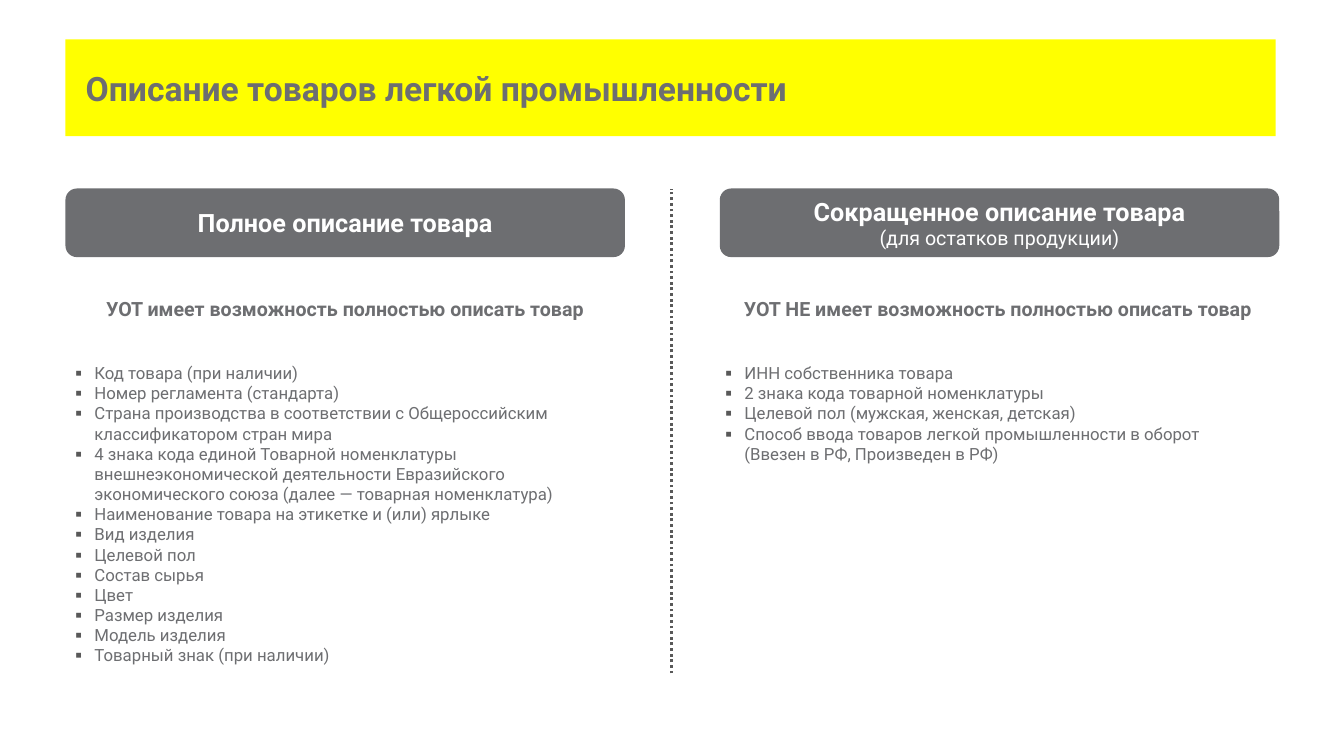
"""Builds a slide comparing full and short descriptions of light-industry goods."""
from dataclasses import dataclass

from lxml import etree
from pptx import Presentation
from pptx import util as u
from pptx.dml.color import RGBColor
from pptx.enum import dml, shapes, text
from pptx.oxml import ns

Cm, Pt = u.Cm, u.Pt


@dataclass(frozen=True)
class Theme:
    font: str = "Roboto"
    grey: RGBColor = RGBColor(0x6D, 0x6E, 0x71)
    dark: RGBColor = RGBColor(0x59, 0x59, 0x59)
    yellow: RGBColor = RGBColor(0xFF, 0xFF, 0x00)
    white: RGBColor = RGBColor(0xFF, 0xFF, 0xFF)
    title: int = 24
    header: int = 18
    lead: int = 14
    body: int = 12


T = Theme()
MARGIN, COLUMN_W = 1.65, 14.1
RIGHT = 18.14
COLUMN_TOP, COLUMN_BOTTOM = 4.75, 16.97

FULL = [
    "Код товара (при наличии)",
    "Номер регламента (стандарта)",
    "Страна производства в соответствии с Общероссийским классификатором стран мира",
    "4 знака кода единой Товарной номенклатуры внешнеэкономической деятельности "
    "Евразийского экономического союза (далее — товарная номенклатура)",
    "Наименование товара на этикетке и (или) ярлыке",
    "Вид изделия",
    "Целевой пол",
    "Состав сырья",
    "Цвет",
    "Размер изделия",
    "Модель изделия",
    "Товарный знак (при наличии)",
]
SHORT = [
    "ИНН собственника товара",
    "2 знака кода товарной номенклатуры",
    "Целевой пол (мужская, женская, детская)",
    "Способ ввода товаров легкой промышленности в оборот (Ввезен в РФ, Произведен в РФ)",
]


def sub(parent, tag, **attrs):
    return etree.SubElement(parent, ns.qn(tag), attrs)


def style(p, size, color, bold=False, align=text.PP_ALIGN.LEFT):
    p.alignment = align
    f = p.font
    f.name, f.size, f.bold = T.font, Pt(size), bold
    f.color.rgb = color


def frame(sp, inset=None):
    tf = sp.text_frame
    tf.word_wrap = True
    tf.auto_size = text.MSO_AUTO_SIZE.NONE
    tf.vertical_anchor = text.MSO_ANCHOR.MIDDLE
    if inset:
        tf.margin_left = tf.margin_right = tf.margin_top = tf.margin_bottom = Cm(inset)
    return tf


def add_title(s, words):
    sp = s.shapes.title
    sp.left, sp.top, sp.width, sp.height = Cm(MARGIN), Cm(0.99), Cm(30.5), Cm(2.44)
    geom = sub(sp.element.spPr, "a:prstGeom", prst="roundRect")
    sub(geom, "a:avLst")
    sp.fill.solid()
    sp.fill.fore_color.rgb = T.yellow
    tf = frame(sp, 0.51)
    tf.text = words
    style(tf.paragraphs[0], T.title, T.grey, True)


def add_header(s, left, words, note=None):
    sp = s.shapes.add_shape(shapes.MSO_SHAPE.ROUNDED_RECTANGLE, Cm(left), Cm(COLUMN_TOP),
                            Cm(COLUMN_W), Cm(1.73))
    sp.shadow.inherit = False
    sp.fill.solid()
    sp.fill.fore_color.rgb = T.grey
    sp.line.fill.background()
    tf = frame(sp, 0.51)
    tf.text = words
    style(tf.paragraphs[0], T.header, T.white, True, text.PP_ALIGN.CENTER)
    if note:
        p = tf.add_paragraph()
        p.text = note
        style(p, T.lead, T.white, align=text.PP_ALIGN.CENTER)


def add_lead(s, left, width, words):
    sp = s.shapes.add_textbox(Cm(left), Cm(7.14), Cm(width), Cm(1.3))
    tf = frame(sp)
    tf.text = words
    style(tf.paragraphs[0], T.lead, T.grey, True, text.PP_ALIGN.CENTER)


def add_bullets(s, left, height, items):
    sp = s.shapes.add_textbox(Cm(left), Cm(9.02), Cm(COLUMN_W), Cm(height))
    tf = frame(sp)
    tf.vertical_anchor = text.MSO_ANCHOR.TOP
    tf.auto_size = text.MSO_AUTO_SIZE.SHAPE_TO_FIT_TEXT
    tf.text = "\n".join(items)
    for p in tf.paragraphs:
        pPr = p._p.get_or_add_pPr()
        pPr.set("marL", str(Cm(0.48)))
        pPr.set("indent", str(-Cm(0.48)))
        sub(sub(pPr, "a:buClr"), "a:srgbClr", val=str(T.dark))
        sub(pPr, "a:buFont", typeface=T.font)
        sub(pPr, "a:buChar", char="▪")
        style(p, T.body, T.grey)


def add_divider(s, x):
    line = s.shapes.add_connector(shapes.MSO_CONNECTOR.STRAIGHT, Cm(x), Cm(COLUMN_BOTTOM),
                                  Cm(x), Cm(COLUMN_TOP))
    line.line.color.rgb = T.dark
    line.line.width = Pt(2)
    line.line.dash_style = dml.MSO_LINE.ROUND_DOT
    sub(line.element.spPr, "a:effectLst")


def main():
    prs = Presentation()
    prs.slide_width, prs.slide_height = Cm(33.87), Cm(19.05)
    s = prs.slides.add_slide(prs.slide_layouts[5])
    add_title(s, "Описание товаров легкой промышленности")
    add_divider(s, 16.93)
    add_header(s, MARGIN, "Полное описание товара")
    add_lead(s, MARGIN, COLUMN_W, "УОТ имеет возможность полностью описать товар")
    add_bullets(s, MARGIN, 7.95, FULL)
    add_header(s, RIGHT, "Сокращенное описание товара", "(для остатков продукции)")
    add_lead(s, RIGHT, 14.02, "УОТ НЕ имеет возможность полностью описать товар")
    add_bullets(s, 18.03, 2.82, SHORT)
    prs.save("out.pptx")


if __name__ == "__main__":
    main()
